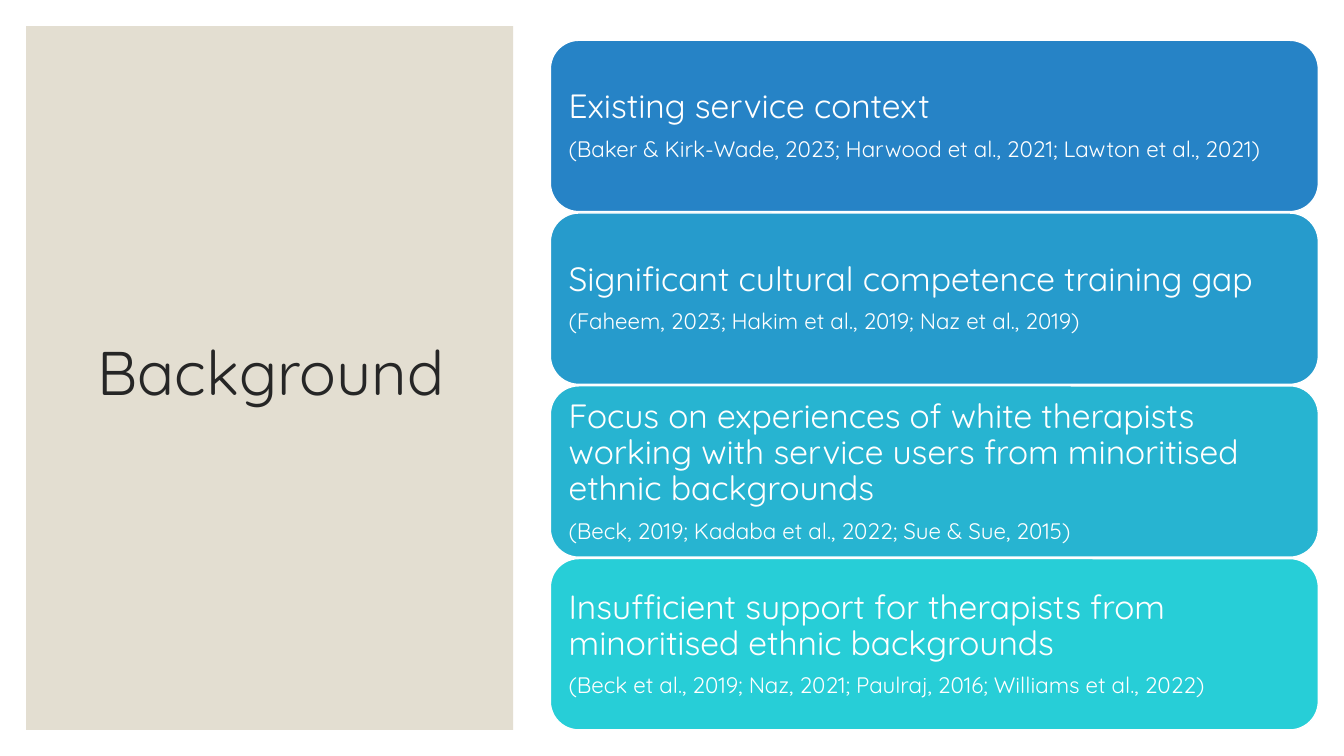
from dataclasses import dataclass

from pptx import Presentation
from pptx.dml.color import RGBColor
from pptx.enum.shapes import MSO_SHAPE
from pptx.enum.text import MSO_ANCHOR, MSO_AUTO_SIZE, PP_ALIGN
from pptx.util import Pt


@dataclass(frozen=True)
class Theme:
    font: str = "Quicksand"
    ink: str = "262626"
    white: str = "FFFFFF"
    sand: str = "E3DED1"
    blues: tuple = ("2683C6", "269BCC", "27B4D1", "27CED7")
    title: int = 44
    head: int = 24
    cite: int = 16


theme = Theme()


def add_block(kind, box, fill):
    block = slide.shapes.add_shape(kind, *map(Pt, box))
    block.shadow.inherit = False
    block.fill.solid()
    block.fill.fore_color.rgb = RGBColor.from_string(fill)
    return block


def style(para, size, color):
    para.line_spacing = 0.9
    for run in para.runs:
        run.font.name = theme.font
        run.font.size = Pt(size)
        run.font.color.rgb = RGBColor.from_string(color)


deck = Presentation()
deck.slide_width, deck.slide_height = Pt(960), Pt(540)
slide = deck.slides.add_slide(deck.slide_layouts[5])

# Title on its sand panel
title = slide.shapes.title
panel = add_block(MSO_SHAPE.RECTANGLE, (18.7, 18.7, 347.8, 502.6), theme.sand)
panel.line.fill.background()
title.element.addprevious(panel.element)

title.left, title.top, title.width, title.height = map(Pt, (45.4, 43.9, 296.6, 449.3))
frame = title.text_frame
frame.text = "Background"
frame.word_wrap = True
frame.auto_size = MSO_AUTO_SIZE.NONE
frame.vertical_anchor = MSO_ANCHOR.MIDDLE
frame.paragraphs[0].alignment = PP_ALIGN.CENTER
style(frame.paragraphs[0], theme.title, theme.ink)

# Stack of cards: a heading and its sources
cards = [
    ("Existing service context",
     "(Baker & Kirk-Wade, 2023; Harwood et al., 2021; Lawton et al., 2021)"),
    ("Significant cultural competence training gap",
     "(Faheem, 2023; Hakim et al., 2019; Naz et al., 2019)"),
    ("Focus on experiences of white therapists working with service users "
     "from minoritised ethnic backgrounds",
     "(Beck, 2019; Kadaba et al., 2022; Sue & Sue, 2015)"),
    ("Insufficient support for therapists from minoritised ethnic backgrounds",
     "(Beck et al., 2019; Naz, 2021; Paulraj, 2016; Williams et al., 2022)"),
]
top, height, pitch = 28.8, 122.4, 123.4

for row, (texts, fill) in enumerate(zip(cards, theme.blues)):
    box = (393.1, top + row * pitch, 548.6, height)
    card = add_block(MSO_SHAPE.ROUNDED_RECTANGLE, box, fill)
    card.line.color.rgb = RGBColor.from_string(theme.white)
    card.line.width = Pt(1)

    frame = card.text_frame
    frame.text = "\n".join(texts)
    frame.word_wrap = True
    frame.vertical_anchor = MSO_ANCHOR.MIDDLE
    frame.margin_left = frame.margin_right = Pt(7.2)
    frame.margin_top = frame.margin_bottom = Pt(7.2)
    for para, size in zip(frame.paragraphs, (theme.head, theme.cite)):
        para.alignment = PP_ALIGN.LEFT
        para.space_after = Pt(0.35 * size)
        style(para, size, theme.white)

deck.save("out.pptx")
